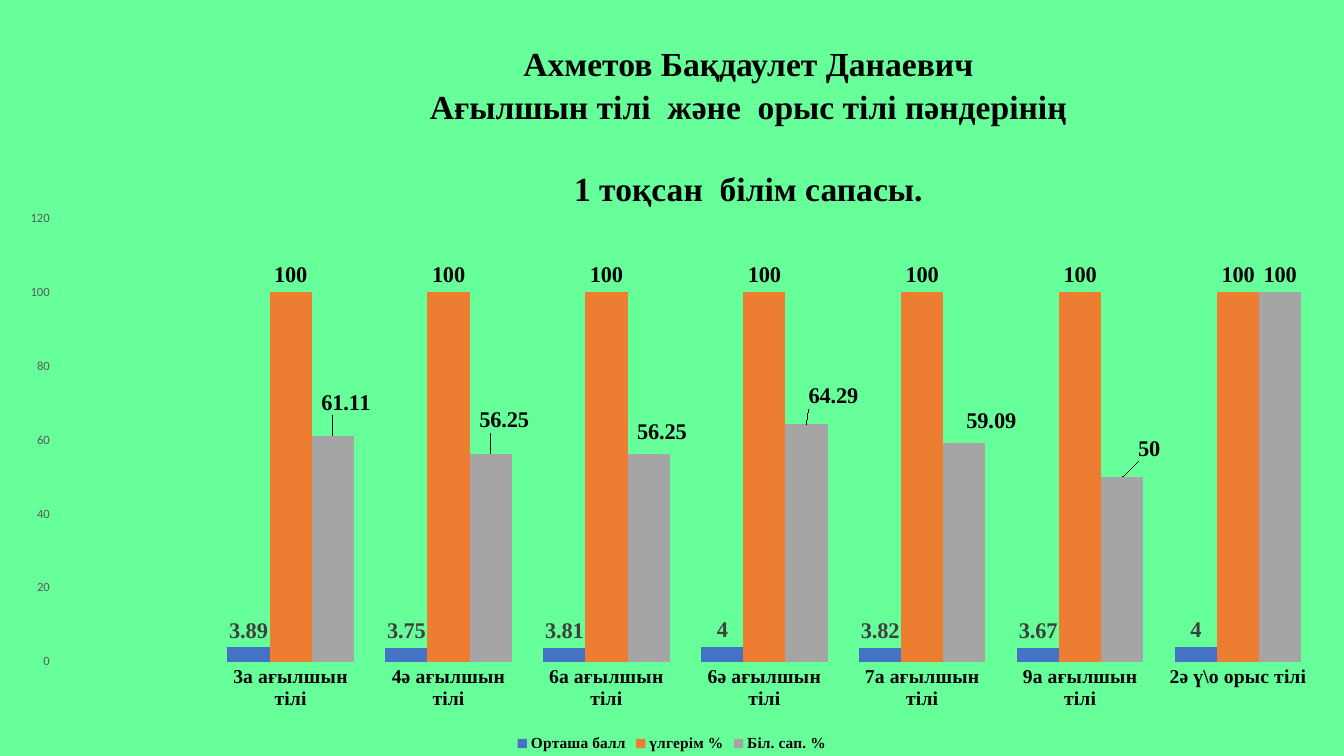
from lxml.etree import SubElement
from pptx import Presentation
from pptx.chart.data import CategoryChartData as ChartData
from pptx.dml.color import RGBColor as Color
from pptx.enum.chart import XL_CHART_TYPE as ChartType
from pptx.enum.chart import XL_LABEL_POSITION as LabelPosition
from pptx.enum.chart import XL_LEGEND_POSITION as LegendPosition
from pptx.enum.chart import XL_TICK_MARK as TickMark
from pptx.enum.text import MSO_ANCHOR as Anchor
from pptx.enum.text import MSO_AUTO_SIZE as AutoSize
from pptx.enum.text import PP_ALIGN as Align
from pptx.oxml.ns import qn
from pptx.util import Cm, Pt

COLORS = {
    "background": "66FF99",
    "text": "000000",
    "scale": "595959",
    "score label": "404040",
}
SERIF, SANS = "Times New Roman", "Calibri"

TITLE_LINES = [
    "Ахметов Бақдаулет Данаевич",
    "Ағылшын тілі  және  орыс тілі пәндерінің",
    "1 тоқсан  білім сапасы.",
]
CLASSES = [
    "",
    "3а ағылшын тілі",
    "4ә ағылшын тілі",
    "6а ағылшын тілі",
    "6ә ағылшын тілі",
    "7а ағылшын тілі",
    "9а ағылшын тілі",
    "2ә ү\\о орыс тілі",
]
SERIES = [
    ("Орташа балл", "4472C4", "score label", [None, 3.89, 3.75, 3.81, 4, 3.82, 3.67, 4]),
    ("үлгерім %", "ED7D31", "text", [None] + [100] * 7),
    ("Біл. сап. %", "A5A5A5", "text", [None, 61.11, 56.25, 56.25, 64.29, 59.09, 50, 100]),
]
QUALITY_LABEL_SHIFTS = {
    1: (0.01, -0.03),
    2: (0.01, -0.03),
    3: (0.01, -0.01),
    4: (0.02, -0.02),
    5: (0.02, -0.01),
    6: (0.02, -0.02),
}
PLOT_AREA = {"x": 0.04, "y": 0.03, "w": 0.94, "h": 0.8}


def style_font(font, size, color="text", name=SERIF, bold=True):
    font.size = Pt(size)
    font.name = name
    font.bold = bold
    font.color.rgb = Color.from_string(COLORS[color])


def fill_layout(layout, settings):
    manual = SubElement(layout, qn("c:manualLayout"))
    for tag, value in settings.items():
        SubElement(manual, qn(f"c:{tag}")).set("val", str(value))


def add_title(slide):
    title = slide.shapes.title
    title.left, title.top = Cm(10.39), Cm(0.91)
    title.width, title.height = Cm(16.94), Cm(4.3)
    frame = title.text_frame
    frame.word_wrap = True
    frame.auto_size = AutoSize.NONE
    frame.vertical_anchor = Anchor.TOP
    frame.text = "\n".join(TITLE_LINES)
    for paragraph in frame.paragraphs:
        paragraph.alignment = Align.CENTER
        paragraph.line_spacing = 1.05
        paragraph.space_before = Pt(0)
        style_font(paragraph.runs[0].font, 24)
    frame.paragraphs[-1].space_before = Pt(29)


def format_axis(axis):
    axis.has_major_gridlines = False
    axis.major_tick_mark = axis.minor_tick_mark = TickMark.NONE
    axis.format.line.fill.background()


def format_series(series, fill, label_color):
    series.format.fill.solid()
    series.format.fill.fore_color.rgb = Color.from_string(fill)
    series.invert_if_negative = False
    labels = series.data_labels
    labels.show_value = True
    labels.position = LabelPosition.OUTSIDE_END
    style_font(labels.font, 16, label_color)


def shift_labels(series, shifts):
    for index, (across, down) in shifts.items():
        label = series.points[index].data_label
        style_font(label.font, 16)
        label.position = LabelPosition.OUTSIDE_END
    for element in series._element.iter(qn("c:dLbl")):
        number = element.find(qn("c:idx"))
        across, down = shifts[int(number.get("val"))]
        layout = SubElement(element, qn("c:layout"))
        fill_layout(layout, {"x": across, "y": down})
        number.addnext(layout)


def add_results_chart(slide, width):
    data = ChartData()
    data.categories = CLASSES
    for name, fill, label_color, values in SERIES:
        data.add_series(name, values)
    chart = slide.shapes.add_chart(
        ChartType.COLUMN_CLUSTERED, 0, Cm(5.08), width, Cm(13.97), data
    ).chart
    style_font(chart.font, 10, name=SANS, bold=False)
    chart.has_title = False
    chart.has_legend = True
    chart.legend.position = LegendPosition.BOTTOM
    chart.legend.include_in_layout = False
    style_font(chart.legend.font, 11)

    format_axis(chart.category_axis)
    style_font(chart.category_axis.tick_labels.font, 14)
    scale = chart.value_axis
    format_axis(scale)
    scale.minimum_scale, scale.maximum_scale, scale.major_unit = 0, 120, 20
    style_font(scale.tick_labels.font, 9, "scale", SANS, False)

    plot = chart.plots[0]
    plot.gap_width = 75
    plot.overlap = 0
    plot.vary_by_categories = False
    for series, (name, fill, label_color, values) in zip(plot.series, SERIES):
        format_series(series, fill, label_color)
    shift_labels(plot.series[-1], QUALITY_LABEL_SHIFTS)

    area = chart._chartSpace.find(".//" + qn("c:plotArea"))
    layout = area.find(qn("c:layout"))
    if layout is None:
        layout = SubElement(area, qn("c:layout"))
        area.insert(0, layout)
    fill_layout(layout, {"layoutTarget": "inner", "xMode": "edge", "yMode": "edge", **PLOT_AREA})


def main():
    presentation = Presentation()
    presentation.slide_width, presentation.slide_height = Cm(33.87), Cm(19.05)
    slide = presentation.slides.add_slide(presentation.slide_layouts[5])
    background = slide.background.fill
    background.solid()
    background.fore_color.rgb = Color.from_string(COLORS["background"])
    add_results_chart(slide, presentation.slide_width)
    add_title(slide)
    presentation.save("out.pptx")


if __name__ == "__main__":
    main()
